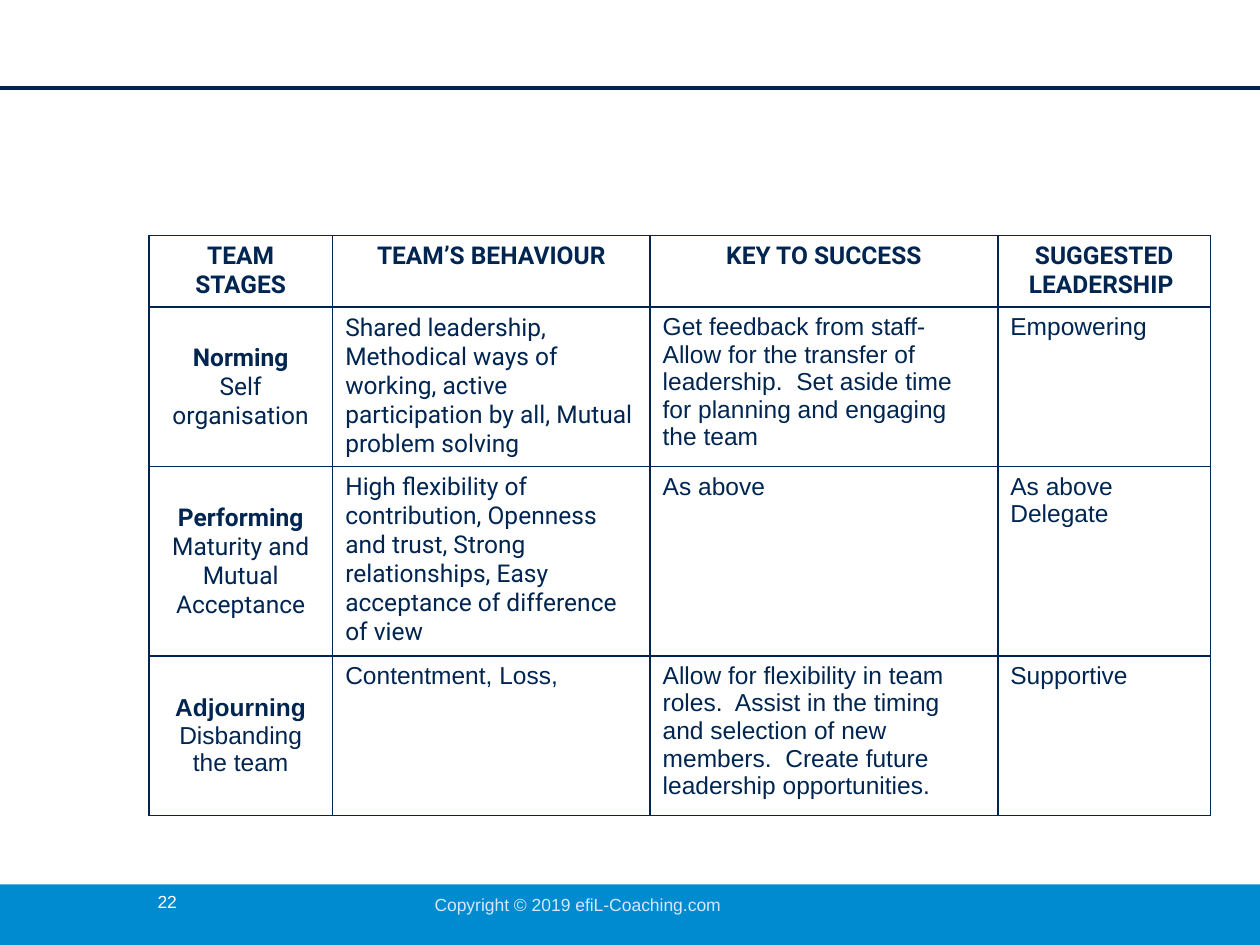
import dataclasses

import lxml.etree
import pptx
import pptx.dml.color
import pptx.enum.shapes
import pptx.enum.text
import pptx.oxml.ns
import pptx.util

Pt = pptx.util.Pt
qn = pptx.oxml.ns.qn
CENTER = pptx.enum.text.PP_ALIGN.CENTER
MIDDLE = pptx.enum.text.MSO_ANCHOR.MIDDLE

NAVY, BLUE, WHITE, PALE = "002551", "008BD0", "FFFFFF", "D4E8FF"
COLUMN_WIDTHS = (105.1, 181.4, 198.7, 121.7)
ROW_HEIGHTS = (40, 90, 106, 86)
HEADINGS = ("TEAM STAGES", "TEAM’S BEHAVIOUR", "KEY TO SUCCESS", "SUGGESTED LEADERSHIP ")


@dataclasses.dataclass
class Stage:
    name: str
    summary: str
    behaviour: str
    key: str
    leadership: str
    font: str = "Roboto"


STAGES = (
    Stage("Norming", "Self organisation",
          "Shared leadership, Methodical ways of working, active participation by all, "
          "Mutual problem solving",
          "Get feedback from staff- Allow for the transfer of leadership.  "
          "Set aside time for planning and engaging the team",
          "Empowering"),
    Stage("Performing", "Maturity and Mutual Acceptance",
          "High flexibility of contribution, Openness and trust, Strong relationships, "
          "Easy acceptance of difference of view",
          "As above", "As above\nDelegate"),
    Stage("Adjourning", "Disbanding the team", "Contentment, Loss,",
          "Allow for flexibility in team roles.  Assist in the timing and selection of "
          "new members.  Create future leadership opportunities.",
          "Supportive", font="Arial"),
)


def color(value: str) -> pptx.dml.color.RGBColor:
    return pptx.dml.color.RGBColor.from_string(value)


def format_runs(paragraph, font: str, size: float, value: str, bold: bool = False) -> None:
    for run in paragraph.runs:
        run.font.name = font
        run.font.size = Pt(size)
        run.font.bold = bold
        run.font.color.rgb = color(value)


def add_label(slide, text: str, left: float, top: float, width: float, height: float,
              value: str):
    box = slide.shapes.add_textbox(Pt(left), Pt(top), Pt(width), Pt(height))
    box.text_frame.text = text
    format_runs(box.text_frame.paragraphs[0], "Arial", 10, value)
    return box.text_frame


def outline_cell(cell) -> None:
    properties = cell._tc.get_or_add_tcPr()
    for side in ("a:lnL", "a:lnR", "a:lnT", "a:lnB"):
        border = lxml.etree.SubElement(properties, qn(side), w=str(Pt(1)))
        fill = lxml.etree.SubElement(border, qn("a:solidFill"))
        lxml.etree.SubElement(fill, qn("a:srgbClr"), val=NAVY)
    cell.fill.background()


def fill_cell(cell, text: str, font: str, centered: bool = False,
              bold_first: bool = False) -> None:
    outline_cell(cell)
    cell.text_frame.text = text
    for index, paragraph in enumerate(cell.text_frame.paragraphs):
        if centered:
            paragraph.alignment = CENTER
        format_runs(paragraph, font, 14, NAVY, bold_first and index == 0)


def add_stage_table(slide) -> None:
    table = slide.shapes.add_table(
        len(STAGES) + 1, len(HEADINGS), Pt(85), Pt(134.6),
        Pt(sum(COLUMN_WIDTHS)), Pt(sum(ROW_HEIGHTS))).table
    table.first_row = False
    table.horz_banding = False
    for column, width in zip(table.columns, COLUMN_WIDTHS):
        column.width = Pt(width)
    for row, height in zip(table.rows, ROW_HEIGHTS):
        row.height = Pt(height)

    for index, heading in enumerate(HEADINGS):
        fill_cell(table.cell(0, index), heading, "Roboto", centered=True, bold_first=True)
    for index, stage in enumerate(STAGES, start=1):
        name_cell = table.cell(index, 0)
        fill_cell(name_cell, f"{stage.name}\n{stage.summary}", stage.font,
                  centered=True, bold_first=True)
        name_cell.vertical_anchor = MIDDLE
        fill_cell(table.cell(index, 1), stage.behaviour, stage.font)
        fill_cell(table.cell(index, 2), stage.key, "Arial")
        fill_cell(table.cell(index, 3), stage.leadership, "Arial")


def main() -> None:
    presentation = pptx.Presentation()
    presentation.slide_width, presentation.slide_height = Pt(720), Pt(540)
    slide = presentation.slides.add_slide(presentation.slide_layouts[6])

    # Footer band and header rule
    band = slide.shapes.add_shape(pptx.enum.shapes.MSO_SHAPE.RECTANGLE,
                                  0, Pt(505.4), Pt(720), Pt(34.6))
    band.shadow.inherit = False
    band.fill.solid()
    band.fill.fore_color.rgb = color(BLUE)
    band.line.fill.background()
    rule = slide.shapes.add_connector(pptx.enum.shapes.MSO_CONNECTOR.STRAIGHT,
                                      0, Pt(50.4), Pt(720), Pt(50.4))
    rule.line.color.rgb = color(NAVY)
    rule.line.width = Pt(2.5)
    lxml.etree.SubElement(rule._element.spPr, qn("a:effectLst"))

    # Page number
    number = add_label(slide, "22", 86.4, 505.4, 36.7, 25.2, WHITE)
    number.word_wrap = True
    number.margin_left = number.margin_right = Pt(3.6)
    number.margin_top = number.margin_bottom = Pt(3.6)

    # Team stages
    add_stage_table(slide)

    # Copyright line
    notice = add_label(slide, "Copyright © 2019 efiL-Coaching.com",
                       241.2, 507.6, 179.3, 19.4, PALE)
    notice.word_wrap = False
    notice.auto_size = pptx.enum.text.MSO_AUTO_SIZE.SHAPE_TO_FIT_TEXT

    presentation.save("out.pptx")


if __name__ == "__main__":
    main()
